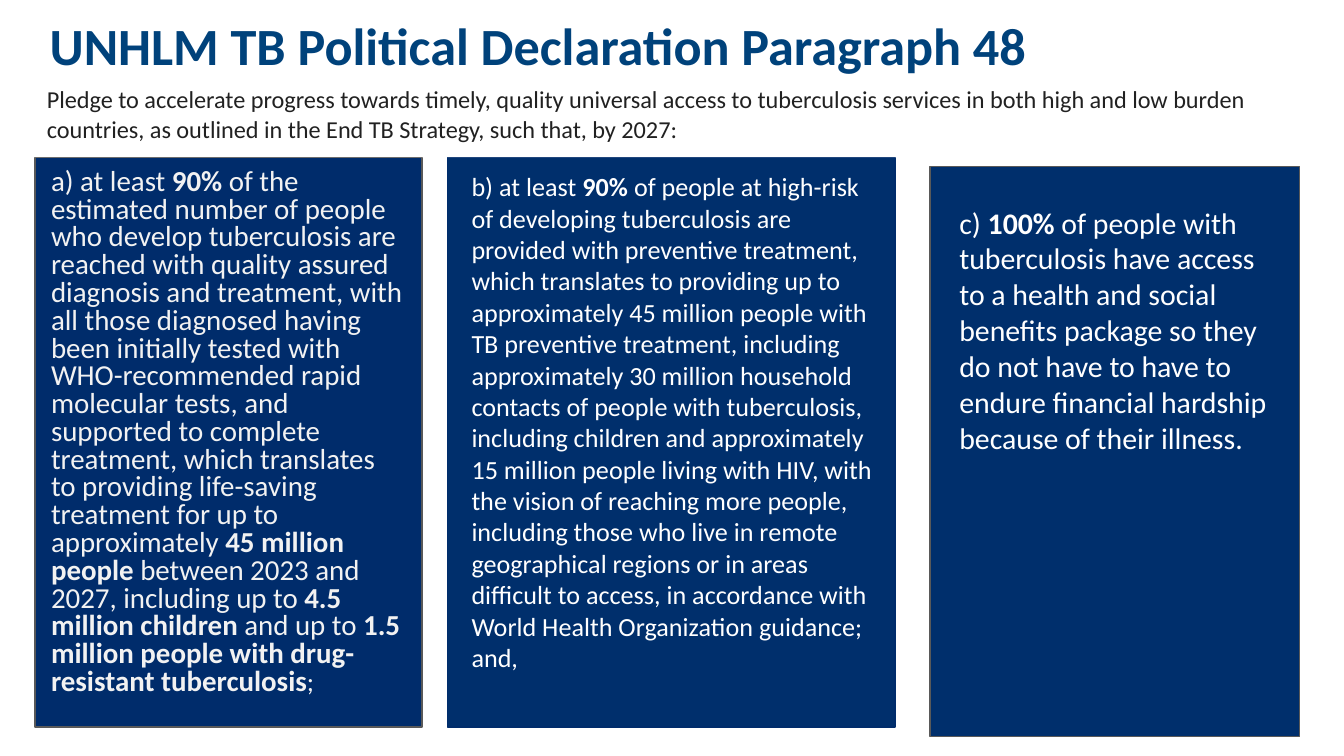
from pptx import Presentation
from pptx.dml.color import RGBColor
from pptx.enum.shapes import MSO_SHAPE
from pptx.enum.text import MSO_ANCHOR, MSO_AUTO_SIZE, PP_ALIGN
from pptx.util import Inches, Pt

RECTANGLE = MSO_SHAPE.RECTANGLE
TOP = MSO_ANCHOR.TOP
NO_AUTOFIT = MSO_AUTO_SIZE.NONE
LEFT = PP_ALIGN.LEFT
TITLE_ONLY = 5

WHITE = "FFFFFF"
NAVY = "002F6C"
DARK_NAVY = "002C6B"
GREY = "595959"


def color(hex_string):
    return RGBColor.from_string(hex_string)


def write_text(shape, text, size=14, color_hex=WHITE, font="Calibri", bold=False,
               line_spacing=1.0, margins=(0.1, 0.1), tail_size=None):
    """Fill the shape with one paragraph; **double stars** mark bold runs."""
    frame = shape.text_frame
    frame.word_wrap = True
    frame.auto_size = NO_AUTOFIT
    frame.vertical_anchor = TOP
    frame.margin_left = frame.margin_right = Inches(margins[0])
    frame.margin_top = frame.margin_bottom = Inches(margins[1])
    paragraph = frame.paragraphs[0]
    paragraph.alignment = LEFT
    paragraph.line_spacing = line_spacing
    for index, part in enumerate(text.split("**")):
        run = paragraph.add_run()
        run.text = part
        run.font.name = font
        run.font.size = Pt(size)
        run.font.bold = bold or index % 2 == 1
        run.font.color.rgb = color(color_hex)
    if tail_size:
        run.font.size = Pt(tail_size)


class SlideBuilder:
    def __init__(self, presentation):
        self.slide = presentation.slides.add_slide(presentation.slide_layouts[TITLE_ONLY])
        self.shapes = self.slide.shapes

    def rectangle(self, box, fill, line=None):
        shape = self.shapes.add_shape(RECTANGLE, *map(Inches, box))
        shape.shadow.inherit = False
        shape.fill.solid()
        shape.fill.fore_color.rgb = color(fill)
        if line:
            shape.line.color.rgb = color(line)
            shape.line.width = Pt(0.75)
        else:
            shape.line.fill.background()
        return shape

    def text_box(self, box, text, **text_format):
        write_text(self.shapes.add_textbox(*map(Inches, box)), text, **text_format)

    def title(self, box, text, **text_format):
        title = self.shapes.title
        title.left, title.top, title.width, title.height = map(Inches, box)
        title.fill.solid()
        title.fill.fore_color.rgb = color(WHITE)
        write_text(title, text, **text_format)
        # Bring the title in front of the introduction it overlaps
        title.element.getparent().append(title.element)


TARGETS = [
    dict(panel=(0.26, 1.17, 2.88, 4.24), fill=DARK_NAVY, line=GREY,
         box=(0.38, 1.21, 2.64, 4.31),
         text="a) at least **90% **of the estimated number of people who develop "
              "tuberculosis are reached with quality assured diagnosis and treatment, "
              "with all those diagnosed having been initially tested with "
              "WHO-recommended rapid molecular tests, and supported to complete "
              "treatment, which translates to providing life-saving treatment for up "
              "to approximately **45 million people** between 2023 and 2027, including "
              "up to **4.5 million children** and up to **1.5 million people with "
              "drug-resistant tuberculosis**;",
         text_format=dict(size=15.5, color_hex="F2F2F2", line_spacing=0.8,
                          margins=(0, 0.05), tail_size=14.4)),
    dict(panel=(3.33, 1.17, 3.33, 4.24), fill=NAVY, line=DARK_NAVY,
         box=(3.41, 1.17, 3.25, 3.97),
         text="b) at least **90% **of people at high-risk of developing tuberculosis "
              "are provided with preventive treatment, which translates to providing "
              "up to approximately 45 million people with TB preventive treatment, "
              "including approximately 30 million household contacts of people with "
              "tuberculosis, including children and approximately 15 million people "
              "living with HIV, with the vision of reaching more people, including "
              "those who live in remote geographical regions or in areas difficult to "
              "access, in accordance with World Health Organization guidance; and,",
         text_format=dict(size=14)),
    dict(panel=(6.92, 1.24, 2.75, 4.24), fill=NAVY, line=GREY,
         box=(7.04, 1.42, 2.5, 2.09),
         text="c) **100% **of people with tuberculosis have access to a health and "
              "social benefits package so they do not have to have to endure financial "
              "hardship because of their illness.",
         text_format=dict(size=16)),
]


def main():
    # Widescreen 16:9 slide
    presentation = Presentation()
    presentation.slide_width = Inches(10)
    presentation.slide_height = presentation.slide_width * 9 // 16
    builder = SlideBuilder(presentation)

    # Three target panels
    for target in TARGETS:
        builder.rectangle(target["panel"], target["fill"], target["line"])
        builder.text_box(target["box"], target["text"], **target["text_format"])

    # Introduction
    introduction = builder.rectangle((0.25, 0.53, 9.48, 0.64), WHITE)
    write_text(introduction,
               "Pledge to accelerate progress towards timely, quality universal access to "
               "tuberculosis services in both high and low burden countries, as outlined "
               "in the End TB Strategy, such that, by 2027:",
               size=13, color_hex="212121")

    # Title
    builder.title((0.27, 0, 9, 0.63), "UNHLM TB Political Declaration Paragraph 48",
                  size=28, color_hex="00427B", bold=True)

    presentation.save("out.pptx")


if __name__ == "__main__":
    main()
